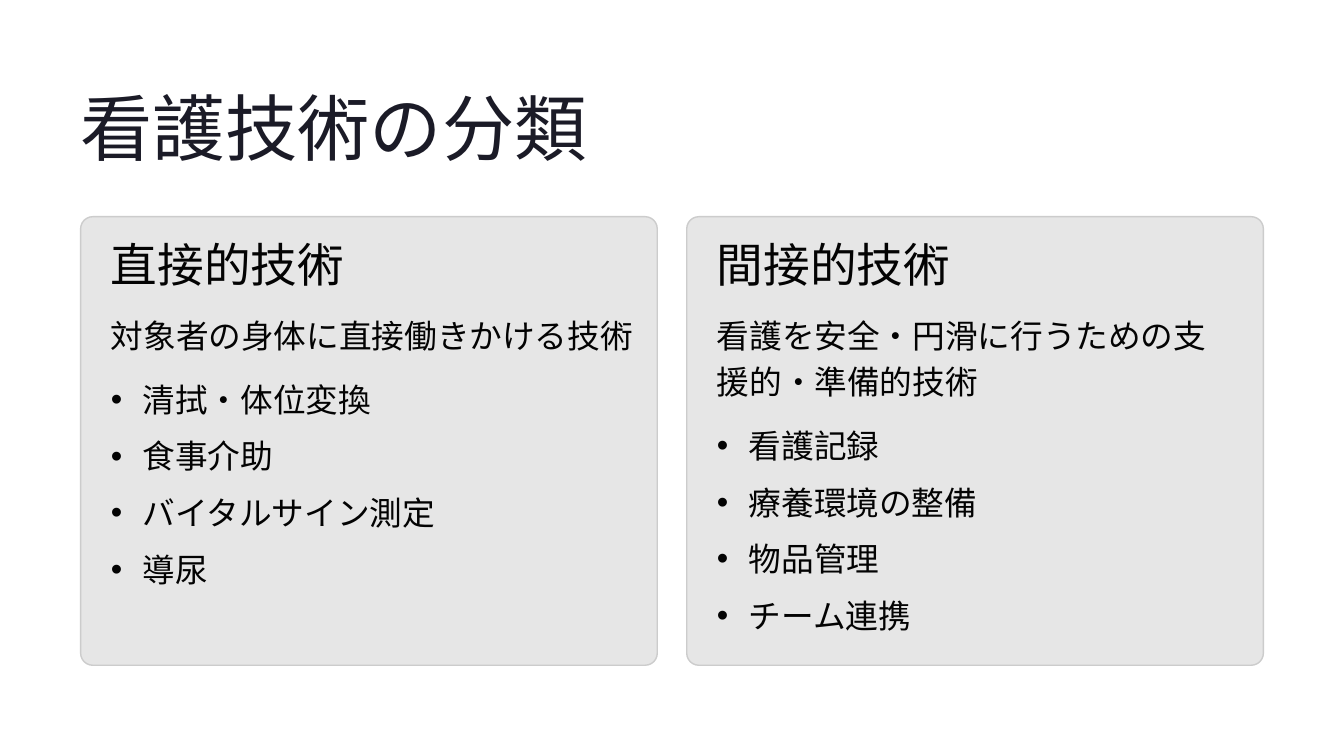
from lxml.etree import SubElement
from pptx import Presentation
from pptx.dml.color import RGBColor
from pptx.enum.shapes import MSO_SHAPE as Preset
from pptx.oxml.ns import qn
from pptx.util import Inches, Pt

TITLE = "看護技術の分類"
CARDS = [
    {
        "heading": "直接的技術",
        "summary": "対象者の身体に直接働きかける技術",
        "summary_lines": 1,
        "summary_extra": 0.26,
        "items": ["清拭・体位変換", "食事介助", "バイタルサイン測定", "導尿"],
    },
    {
        "heading": "間接的技術",
        "summary": "看護を安全・円滑に行うための支援的・準備的技術",
        "summary_lines": 2,
        "summary_extra": 0,
        "items": ["看護記録", "療養環境の整備", "物品管理", "チーム連携"],
    },
]
COLORS = {"title": "1B1B27", "text": "030303", "card": "E6E6E6", "border": "CCCCCC"}

WIDTH, HEIGHT = 16, 9
MARGIN, GUTTER = 0.96, 0.35
CARD_TOP, CARD_HEIGHT = 2.58, 5.34
CARD_WIDTH = (WIDTH - 2 * MARGIN - GUTTER) / len(CARDS)
PADDING = 0.36
TEXT_WIDTH = CARD_WIDTH - 2 * PADDING
HEADING_TOP, SUMMARY_TOP = 2.94, 3.68
LINE, ITEM_GAP = 39.5, 9
LINE_HEIGHT = LINE / 72
LIST_GAP = 0.21
BULLET_INDENT = 0.38


def color(name):
    return RGBColor.from_string(COLORS[name])


def add_bullet(paragraph):
    properties = paragraph._p.get_or_add_pPr()
    properties.set("marL", str(Inches(BULLET_INDENT)))
    properties.set("indent", str(-Inches(BULLET_INDENT)))
    SubElement(properties, qn("a:buFont")).set("typeface", "Arial")
    SubElement(properties, qn("a:buChar")).set("char", "•")


def add_text(slide, lines, left, top, width, height, *, size=28, font="Lato",
             fill="text", spacing=LINE, bullets=False):
    box = slide.shapes.add_textbox(*map(Inches, (left, top, width, height)))
    frame = box.text_frame
    frame.margin_left = frame.margin_right = frame.margin_top = frame.margin_bottom = 0
    frame.word_wrap = True
    for index, line in enumerate(lines):
        paragraph = frame.add_paragraph() if index else frame.paragraphs[0]
        if bullets:
            add_bullet(paragraph)
        paragraph.line_spacing = Pt(spacing)
        if index:
            paragraph.space_before = Pt(ITEM_GAP)
        run = paragraph.add_run()
        run.text = line
        run.font.size = Pt(size)
        run.font.name = font
        run.font.color.rgb = color(fill)


def add_card(slide, card, left):
    panel = slide.shapes.add_shape(
        Preset.ROUNDED_RECTANGLE,
        *map(Inches, (left, CARD_TOP, CARD_WIDTH, CARD_HEIGHT)))
    panel.adjustments[0] = 0.027
    panel.shadow.inherit = False
    panel.fill.solid()
    panel.fill.fore_color.rgb = color("card")
    panel.line.color.rgb = color("border")
    panel.line.width = Pt(1.2)

    text_left = left + PADDING
    add_text(slide, [card["heading"]], text_left, HEADING_TOP, TEXT_WIDTH, 0.54,
             size=40, font="Inter", spacing=38.5)
    summary_height = card["summary_lines"] * LINE_HEIGHT
    add_text(slide, [card["summary"]], text_left, SUMMARY_TOP,
             TEXT_WIDTH + card["summary_extra"], summary_height)
    items = card["items"]
    list_height = len(items) * LINE_HEIGHT + (len(items) - 1) * ITEM_GAP / 72
    add_text(slide, items, text_left, SUMMARY_TOP + summary_height + LIST_GAP,
             TEXT_WIDTH, list_height, bullets=True)


def main():
    presentation = Presentation()
    presentation.slide_width = Inches(WIDTH)
    presentation.slide_height = Inches(HEIGHT)
    slide = presentation.slides.add_slide(presentation.slide_layouts[6])
    add_text(slide, [TITLE], MARGIN, 0.95, 8.61, 1.08,
             size=62, font="Inter", fill="title", spacing=77.5)
    for column, card in enumerate(CARDS):
        add_card(slide, card, MARGIN + column * (CARD_WIDTH + GUTTER))
    presentation.save("out.pptx")


if __name__ == "__main__":
    main()
